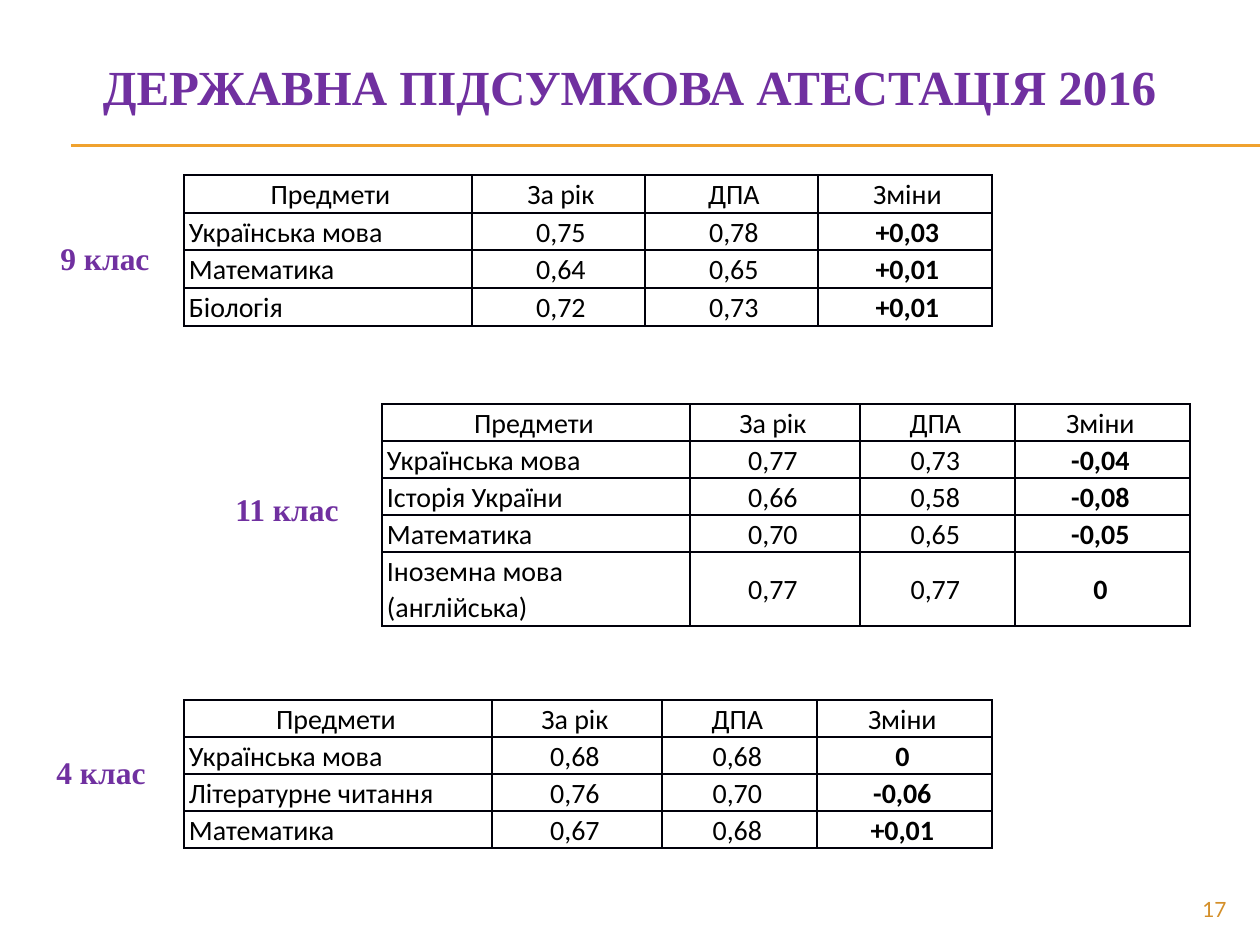
from dataclasses import dataclass

from lxml.etree import SubElement
from pptx import Presentation
from pptx.dml.color import RGBColor
from pptx.enum.shapes import MSO_CONNECTOR
from pptx.enum.text import MSO_ANCHOR, PP_ALIGN
from pptx.oxml.ns import qn
from pptx.slide import Slide
from pptx.table import _Cell
from pptx.text.text import _Paragraph
from pptx.util import Emu, Pt

PX_PER_INCH = 126
COLORS = {
    "purple": "7030A0",
    "gold": "F0A22E",
    "dark_gold": "D48F29",
    "text": "000000",
    "border": "00000A",
    "cell": "FFFFFF",
}
HEADINGS = ("Предмети", "За рік", "ДПА", "Зміни")
ROW_HEIGHT = 37
WIDE_COLUMNS = (308, 170, 155, 175)


@dataclass(frozen=True)
class Label:
    text: str
    left: int
    top: int
    width: int
    height: int
    size: int = 18
    font: str = "Times New Roman"
    color: str = "purple"
    bold: bool = True
    align: PP_ALIGN = PP_ALIGN.LEFT
    anchor: MSO_ANCHOR = MSO_ANCHOR.TOP


@dataclass(frozen=True)
class Results:
    left: int
    top: int
    columns: tuple[int, ...]
    row_heights: tuple[int, ...]
    right_inset: int
    subjects: tuple[tuple[str, ...], ...]


LABELS = (
    Label("ДЕРЖАВНА ПІДСУМКОВА АТЕСТАЦІЯ 2016", 44, 50, 1171, 72,
          size=28, align=PP_ALIGN.CENTER),
    Label("9 клас", 48, 233, 126, 50),
    Label("11 клас", 223, 484, 146, 50),
    Label("4 клас", 44, 747, 146, 50),
    Label("17", 1134, 892, 105, 34, size=12, font="Lato", color="dark_gold",
          bold=False, align=PP_ALIGN.RIGHT, anchor=MSO_ANCHOR.MIDDLE),
)

GRADES = (
    Results(184, 175, (288, 173, 173, 174), (38, 37, 38, 38), 0, (
        ("Українська мова", "0,75", "0,78", "+0,03"),
        ("Математика", "0,64", "0,65", "+0,01"),
        ("Біологія", "0,72", "0,73", "+0,01"),
    )),
    Results(382, 404, WIDE_COLUMNS, (ROW_HEIGHT,) * 4 + (2 * ROW_HEIGHT,), 9, (
        ("Українська мова", "0,77", "0,73", "-0,04"),
        ("Історія України", "0,66", "0,58", "-0,08"),
        ("Математика", "0,70", "0,65", "-0,05"),
        ("Іноземна мова (англійська)", "0,77", "0,77", "0"),
    )),
    Results(184, 700, WIDE_COLUMNS, (ROW_HEIGHT,) * 4, 9, (
        ("Українська мова", "0,68", "0,68", "0"),
        ("Літературне читання", "0,76", "0,70", "-0,06"),
        ("Математика", "0,67", "0,68", "+0,01"),
    )),
)


def px(length: int) -> Emu:
    return Emu(round(length * 914400 / PX_PER_INCH))


def rgb(name: str) -> RGBColor:
    return RGBColor.from_string(COLORS[name])


def add_run(paragraph: _Paragraph, text: str, size: int, font: str,
            color: str, bold: bool) -> None:
    run = paragraph.add_run()
    run.text = text
    run.font.size = Pt(size)
    run.font.name = font
    run.font.bold = bold
    run.font.color.rgb = rgb(color)


def add_label(slide: Slide, label: Label) -> None:
    box = slide.shapes.add_textbox(
        px(label.left), px(label.top), px(label.width), px(label.height))
    frame = box.text_frame
    frame.word_wrap = True
    frame.vertical_anchor = label.anchor
    paragraph = frame.paragraphs[0]
    paragraph.alignment = label.align
    add_run(paragraph, label.text, label.size, label.font, label.color, label.bold)


def add_rule(slide: Slide, left: int, right: int, top: int) -> None:
    rule = slide.shapes.add_connector(
        MSO_CONNECTOR.STRAIGHT, px(left), px(top), px(right), px(top))
    rule.line.color.rgb = rgb("gold")
    rule.line.width = Pt(0.75)
    SubElement(rule._element.spPr, qn("a:effectLst"))


def add_borders(cell: _Cell) -> None:
    properties = cell._tc.get_or_add_tcPr()
    for index, side in enumerate(("lnL", "lnR", "lnT", "lnB")):
        border = SubElement(properties, qn(f"a:{side}"), w=str(Pt(1)))
        fill = SubElement(border, qn("a:solidFill"))
        SubElement(fill, qn("a:srgbClr"), val=COLORS["border"])
        properties.insert(index, border)


def fill_cell(cell: _Cell, text: str, right_inset: int,
              centered: bool, bold: bool) -> None:
    cell.margin_left = px(5)
    cell.margin_right = px(right_inset)
    cell.margin_top = cell.margin_bottom = 0
    cell.vertical_anchor = MSO_ANCHOR.MIDDLE
    cell.fill.solid()
    cell.fill.fore_color.rgb = rgb("cell")
    add_borders(cell)
    paragraph = cell.text_frame.paragraphs[0]
    paragraph.alignment = PP_ALIGN.CENTER if centered else PP_ALIGN.LEFT
    paragraph.line_spacing = 1.07
    paragraph.space_after = Pt(8)
    add_run(paragraph, text, 16, "Calibri", "text", bold)


def add_results(slide: Slide, results: Results) -> None:
    rows = (HEADINGS, *results.subjects)
    table = slide.shapes.add_table(
        len(rows), len(HEADINGS), px(results.left), px(results.top),
        px(sum(results.columns)), px(sum(results.row_heights))).table
    table.first_row = False
    table.horz_banding = False
    for column, width in zip(table.columns, results.columns):
        column.width = px(width)
    for row, height in zip(table.rows, results.row_heights):
        row.height = px(height)
    for r, values in enumerate(rows):
        for c, value in enumerate(values):
            is_heading = r == 0
            is_change = c == len(HEADINGS) - 1
            fill_cell(table.cell(r, c), value, results.right_inset,
                      centered=is_heading or c > 0,
                      bold=is_change and not is_heading)


def main() -> None:
    presentation = Presentation()
    presentation.slide_width = px(1260)
    presentation.slide_height = px(945)
    slide = presentation.slides.add_slide(presentation.slide_layouts[6])
    for top in (145, 146):
        add_rule(slide, 71, 1260, top)
    for results in GRADES:
        add_results(slide, results)
    for label in LABELS:
        add_label(slide, label)
    presentation.save("out.pptx")


if __name__ == "__main__":
    main()
